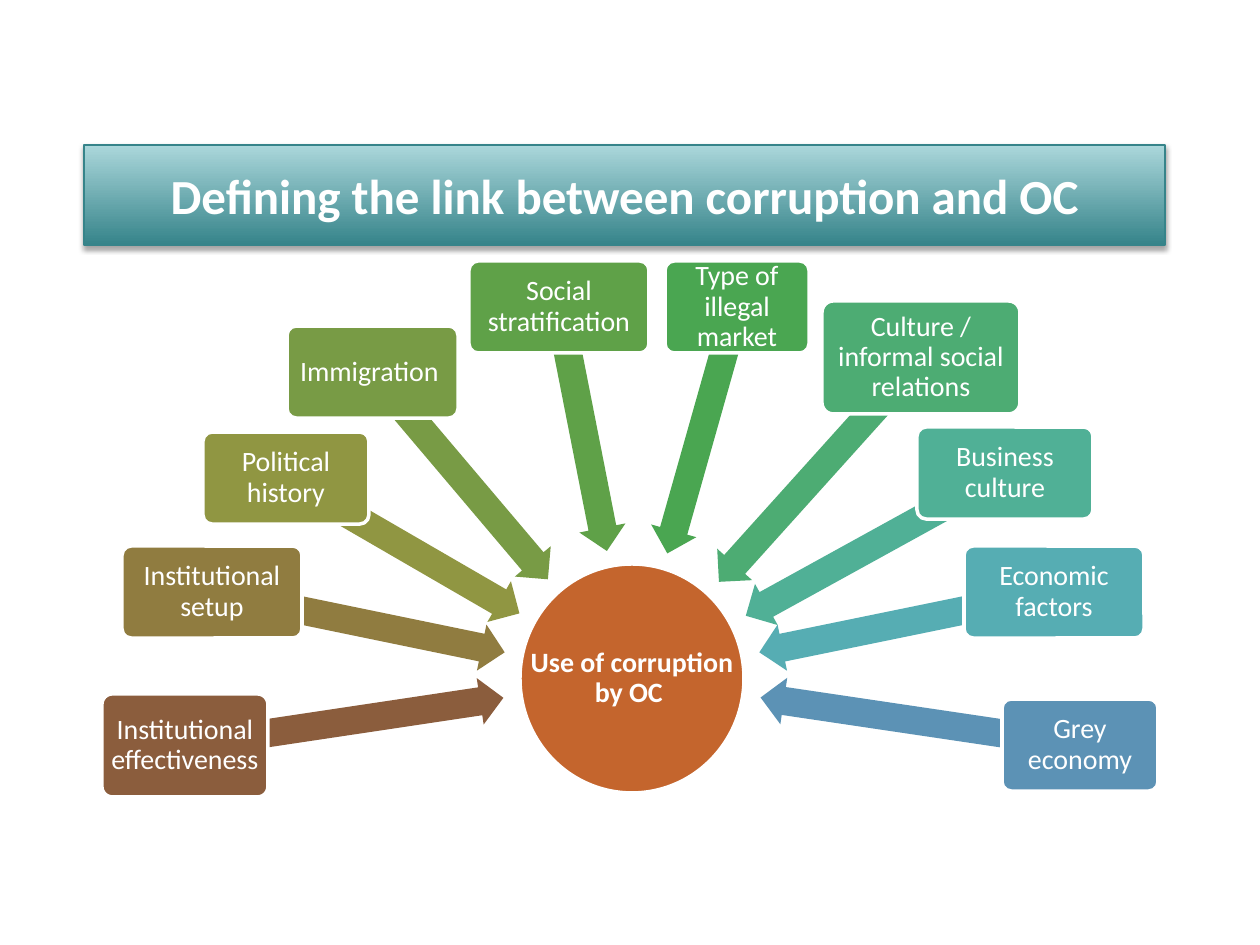
import math

import pptx
import pptx.util
import pptx.dml.color
import pptx.enum.shapes
import pptx.enum.text
import pptx.oxml

RGBColor = pptx.dml.color.RGBColor
SHAPE = pptx.enum.shapes.MSO_SHAPE
SCALE = 914400 / 126  # EMU in one px

WHITE = RGBColor(0xFF, 0xFF, 0xFF)
ORANGE = RGBColor(0xC4, 0x65, 0x2D)
TEAL_LIGHT = RGBColor(0xAB, 0xD7, 0xDB)
TEAL_DARK = RGBColor(0x36, 0x84, 0x8A)
BROWN = RGBColor(0x8B, 0x5D, 0x3D)
KHAKI = RGBColor(0x90, 0x7C, 0x40)
OLIVE = RGBColor(0x90, 0x96, 0x42)
MOSS = RGBColor(0x78, 0x9B, 0x45)
LEAF = RGBColor(0x5F, 0xA1, 0x48)
GREEN = RGBColor(0x4A, 0xA6, 0x51)
JADE = RGBColor(0x4D, 0xAC, 0x73)
MINT = RGBColor(0x50, 0xB0, 0x96)
AQUA = RGBColor(0x56, 0xAD, 0xB3)
BLUE = RGBColor(0x5C, 0x92, 0xB5)

TITLE_AREA = (84, 145, 1081, 100)
HUB_AREA = (520, 564, 224, 229)
TIP_DISTANCE = 130  # from hub centre to arrow tip
ARROW_HEIGHT = 47

# Label, colour, area (left, top, width, height)
FACTORS = [
    ("Institutional effectiveness", BROWN, (102, 694, 166, 103)),
    ("Institutional setup", KHAKI, (122, 546, 180, 92)),
    ("Political history", OLIVE, (203, 432, 166, 92)),
    ("Immigration ", MOSS, (287, 326, 171, 92)),
    ("Social stratification", LEAF, (469, 261, 180, 92)),
    ("Type of illegal market", GREEN, (665, 261, 144, 92)),
    ("Culture / informal social relations", JADE, (822, 301, 198, 113)),
    ("Business culture", MINT, (917, 427, 176, 92)),
    ("Economic factors", AQUA, (964, 546, 180, 92)),
    ("Grey economy", BLUE, (1002, 699, 156, 92)),
]

LABEL_FONT = {"name": "Calibri", "size": pptx.util.Pt(16), "bold": False}
HUB_FONT = {**LABEL_FONT, "bold": True}
TITLE_FONT = {**HUB_FONT, "size": pptx.util.Pt(28)}

SHADOW = (
    '<a:effectLst xmlns:a="http://schemas.openxmlformats.org/drawingml/2006/main">'
    '<a:outerShdw blurRad="40000" dist="23000" dir="5400000" rotWithShape="0">'
    '<a:srgbClr val="000000"><a:alpha val="35000"/></a:srgbClr>'
    "</a:outerShdw></a:effectLst>"
)


def emu(*lengths):
    return [pptx.util.Emu(round(length * SCALE)) for length in lengths]


def centre(area):
    left, top, width, height = area
    return left + width / 2, top + height / 2


def add_filled(page, preset, area, colour, outline=None):
    shape = page.shapes.add_shape(preset, *emu(*area))
    shape.shadow.inherit = False
    shape.fill.solid()
    shape.fill.fore_color.rgb = colour
    if outline is None:
        shape.line.fill.background()
    else:
        shape.line.color.rgb = outline
        shape.line.width = pptx.util.Pt(2)
    return shape


def write(box, text, font, inset, spacing=0.9):
    frame = box.text_frame
    margin = emu(inset)[0]
    settings = {
        "word_wrap": True,
        "vertical_anchor": pptx.enum.text.MSO_ANCHOR.MIDDLE,
        "margin_left": margin,
        "margin_right": margin,
        "margin_top": margin,
        "margin_bottom": margin,
    }
    for name, value in settings.items():
        setattr(frame, name, value)
    para = frame.paragraphs[0]
    para.alignment = pptx.enum.text.PP_ALIGN.CENTER
    para.line_spacing = spacing
    span = para.add_run()
    span.text = text
    for name, value in font.items():
        setattr(span.font, name, value)
    span.font.color.rgb = WHITE


def add_title(page):
    bar = add_filled(page, SHAPE.RECTANGLE, TITLE_AREA, TEAL_DARK, TEAL_DARK)
    bar.line.width = pptx.util.Pt(0.75)
    bar.fill.gradient()
    bar.fill.gradient_angle = 270
    for stop, colour in zip(bar.fill.gradient_stops, (TEAL_LIGHT, TEAL_DARK)):
        stop.color.rgb = colour
    properties = bar.element.spPr
    empty_effects = properties.find(pptx.oxml.ns.qn("a:effectLst"))
    properties.replace(empty_effects, pptx.oxml.parse_xml(SHADOW))
    write(bar, "Defining the link between corruption and OC", TITLE_FONT, 6, 1.0)


def add_hub(page):
    add_filled(page, SHAPE.OVAL, HUB_AREA, ORANGE, WHITE)
    # The label spans the full width of the circle
    label = page.shapes.add_textbox(*emu(*HUB_AREA))
    write(label, "Use of corruption by OC ", HUB_FONT, 1)


def add_arrow(page, area, colour):
    """Run from the centre of a factor towards the hub, stopping short of it."""
    start_x, start_y = centre(area)
    hub_x, hub_y = centre(HUB_AREA)
    angle = math.atan2(hub_y - start_y, hub_x - start_x)
    length = math.hypot(hub_x - start_x, hub_y - start_y) - TIP_DISTANCE
    middle_x = start_x + math.cos(angle) * length / 2
    middle_y = start_y + math.sin(angle) * length / 2
    place = (middle_x - length / 2, middle_y - ARROW_HEIGHT / 2, length, ARROW_HEIGHT)
    arrow = add_filled(page, SHAPE.LEFT_ARROW, place, colour)
    arrow.adjustments[0] = 0.6
    arrow.adjustments[1] = 0.5
    arrow.rotation = math.degrees(angle) + 180


def add_factor(page, text, colour, area):
    add_arrow(page, area, colour)
    box = add_filled(page, SHAPE.ROUNDED_RECTANGLE, area, colour, WHITE)
    box.adjustments[0] = 0.1
    write(box, text, LABEL_FONT, 4)


def main():
    deck = pptx.Presentation()
    deck.slide_width, deck.slide_height = emu(1260, 945)
    page = deck.slides.add_slide(deck.slide_layouts[6])
    add_hub(page)
    for text, colour, area in FACTORS:
        add_factor(page, text, colour, area)
    add_title(page)
    deck.save("out.pptx")


if __name__ == "__main__":
    main()
